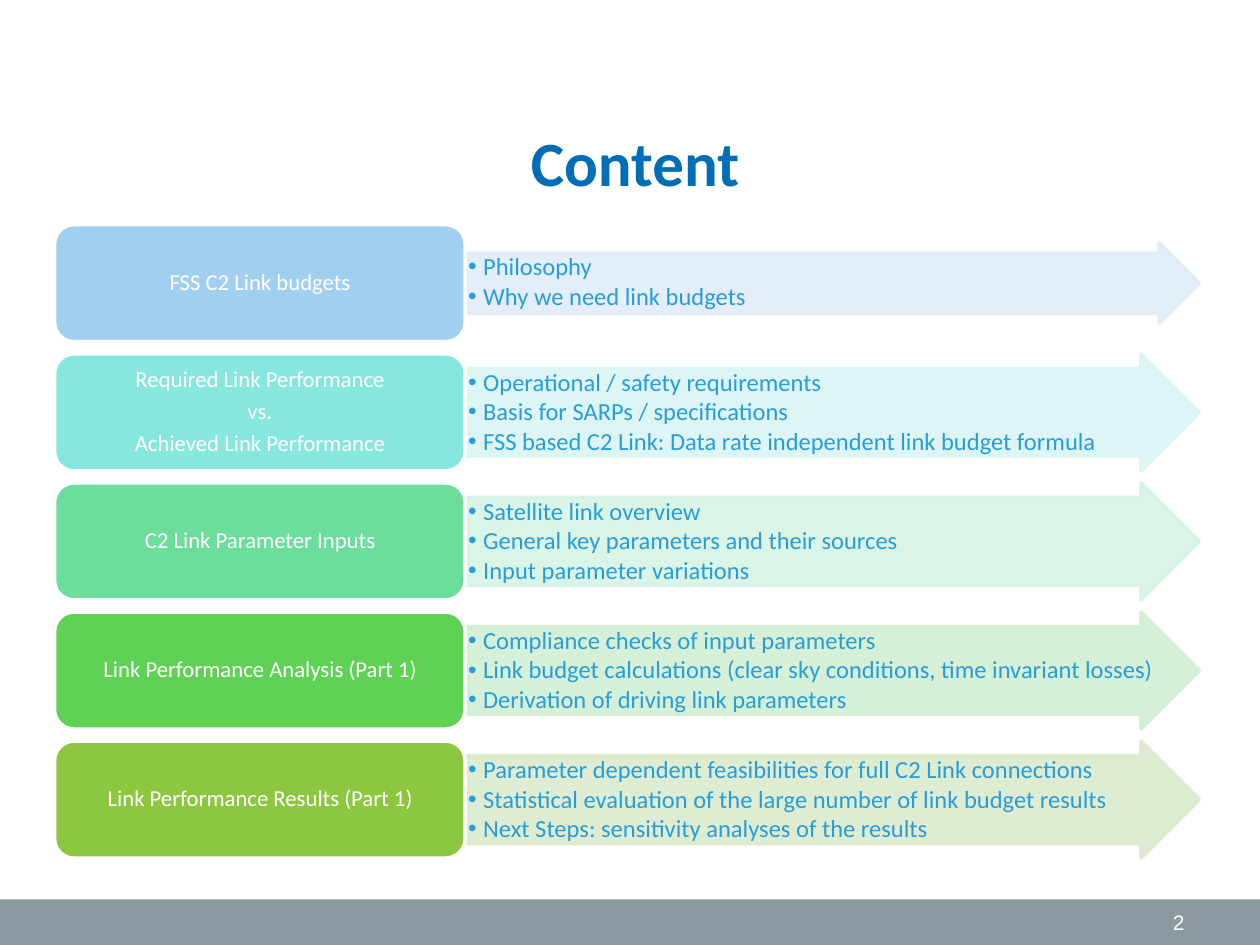
from dataclasses import dataclass

from lxml.etree import SubElement
from pptx import Presentation
from pptx.dml.color import RGBColor
from pptx.enum.shapes import MSO_SHAPE
from pptx.enum.text import MSO_ANCHOR, PP_ALIGN
from pptx.oxml.ns import qn
from pptx.util import Cm, Pt


@dataclass(frozen=True)
class Theme:
    """Colours, fonts and type sizes of the deck."""
    white: str = "FFFFFF"
    title: str = "006EB7"
    bullet: str = "279DD9"
    footer: str = "8C99A1"
    body_font: str = "Calibri"
    number_font: str = "Arial"
    title_size: float = 36
    bullet_size: float = 14
    card_size: float = 13
    number_size: float = 12


THEME = Theme()

ROWS = [
    (["FSS C2 Link budgets"], "A1CFEF", "E0EDF9", 1.62,
     ["Philosophy", "Why we need link budgets"]),
    (["Required Link Performance", "vs.", "Achieved Link Performance"],
     "86E7DF", "DAF6F5", 2.36,
     ["Operational / safety requirements",
      "Basis for SARPs / specifications",
      "FSS based C2 Link: Data rate independent link budget formula"]),
    (["C2 Link Parameter Inputs"], "6DDD9C", "D6F3E4", 2.36,
     ["Satellite link overview",
      "General key parameters and their sources",
      "Input parameter variations"]),
    (["Link Performance Analysis (Part 1)"], "5FD255", "D2EFD3", 2.36,
     ["Compliance checks of input parameters",
      "Link budget calculations (clear sky conditions, time invariant losses)",
      "Derivation of driving link parameters"]),
    (["Link Performance Results (Part 1)"], "8DC63F", "DBEACE", 2.36,
     ["Parameter dependent feasibilities for full C2 Link connections",
      "Statistical evaluation of the large number of link budget results",
      "Next Steps: sensitivity analyses of the results"]),
]


def apply_format(target, values):
    """Set every attribute named in values on target."""
    for name, value in values.items():
        setattr(target, name, value)


def add_block(page, kind, box, fill, line=None, alpha=None):
    """Add a filled preset shape, optionally outlined and translucent."""
    shape = page.shapes.add_shape(kind, *(Cm(length) for length in box))
    shape.shadow.inherit = False
    shape.fill.solid()
    shape.fill.fore_color.rgb = RGBColor.from_string(fill)
    if line:
        shape.line.color.rgb = RGBColor.from_string(line)
        shape.line.width = Pt(2)
    else:
        shape.line.fill.background()
    if alpha:
        for colour in shape._element.spPr.iter(qn("a:srgbClr")):
            SubElement(colour, qn("a:alpha"), val=str(alpha * 1000))
    return shape


def add_bullet(para):
    """Give a paragraph a hanging round bullet."""
    properties = para._p.get_or_add_pPr()
    properties.set("marL", str(Cm(0.3)))
    properties.set("indent", str(-Cm(0.3)))
    SubElement(properties, qn("a:buFont"), typeface="Arial")
    SubElement(properties, qn("a:buChar"), char="•")


def write_text(shape, lines, font, frame_format, para_format, bullets=False):
    """Fill a shape with one formatted paragraph for each line."""
    frame = shape.text_frame
    apply_format(frame, {"word_wrap": True, **frame_format})
    for index, line in enumerate(lines):
        para = frame.add_paragraph() if index else frame.paragraphs[0]
        if bullets:
            add_bullet(para)
        apply_format(para, para_format)
        span = para.add_run()
        span.text = line
        name, size, colour, bold = font
        apply_format(span.font, {"name": name, "size": Pt(size), "bold": bold})
        span.font.color.rgb = RGBColor.from_string(colour)


def margins(across, down):
    """Return text frame margins in centimetres."""
    return {"margin_left": Cm(across), "margin_right": Cm(across),
            "margin_top": Cm(down), "margin_bottom": Cm(down)}


def add_title(page, box, text):
    """Add the centred slide title."""
    title = page.shapes.add_textbox(*(Cm(length) for length in box))
    write_text(title, [text],
               (THEME.body_font, THEME.title_size, THEME.title, True),
               {"vertical_anchor": MSO_ANCHOR.TOP},
               {"alignment": PP_ALIGN.CENTER})


def add_row(page, box, row):
    """Add a topic card with its arrow of bullet points."""
    left, top, width, height = box
    topic, card_fill, arrow_fill, arrow_height, points = row
    card_width = 8.28
    arrow_left = left + card_width + 0.03
    arrow_box = (arrow_left, top + (height - arrow_height) / 2,
                 left + width - arrow_left, arrow_height)
    arrow = add_block(page, MSO_SHAPE.RIGHT_ARROW, arrow_box,
                      arrow_fill, arrow_fill, 90)
    arrow.adjustments[0] = 0.75
    arrow.adjustments[1] = 0.5
    write_text(arrow, points,
               (THEME.body_font, THEME.bullet_size, THEME.bullet, False),
               {"vertical_anchor": MSO_ANCHOR.TOP, **margins(0.03, 0.03)},
               {"alignment": PP_ALIGN.LEFT, "level": 1, "line_spacing": 0.9,
                "space_after": Pt(1.8)}, bullets=True)
    card = add_block(page, MSO_SHAPE.ROUNDED_RECTANGLE,
                     (left, top, card_width, height), card_fill, THEME.white)
    write_text(card, topic,
               (THEME.body_font, THEME.card_size, THEME.white, False),
               {"vertical_anchor": MSO_ANCHOR.MIDDLE, **margins(0.13, 0.08)},
               {"alignment": PP_ALIGN.CENTER, "line_spacing": 0.9,
                "space_after": Pt(4.3)})


def add_rows(page, box, rows):
    """Stack the rows evenly over the height of the box."""
    left, top, width, height = box
    row_height = 2.36
    pitch = (height - row_height) / (len(rows) - 1)
    for index, row in enumerate(rows):
        add_row(page, (left, top + index * pitch, width, row_height), row)


def add_footer(page, box, number):
    """Add the footer band with the page number at its right."""
    left, top, width, height = box
    add_block(page, MSO_SHAPE.RECTANGLE, box, THEME.footer)
    number_width = 5.92
    number_left = left + width - 1.27 - number_width
    label = page.shapes.add_textbox(Cm(number_left), Cm(top),
                                    Cm(number_width), Cm(height))
    write_text(label, [str(number)],
               (THEME.number_font, THEME.number_size, THEME.white, False),
               {"vertical_anchor": MSO_ANCHOR.MIDDLE},
               {"alignment": PP_ALIGN.RIGHT})


def main():
    """Build and save the deck."""
    deck = Presentation()
    apply_format(deck, {"slide_width": Cm(25.4), "slide_height": Cm(19.05)})
    page = deck.slides.add_slide(deck.slide_layouts[6])
    add_footer(page, (0, 18.13, 25.4, 0.92), 2)
    add_title(page, (1.27, 2.36, 23.06, 1.52), "Content")
    add_rows(page, (1.1, 4.53, 23.08, 12.77), ROWS)
    deck.save("out.pptx")


if __name__ == "__main__":
    main()
